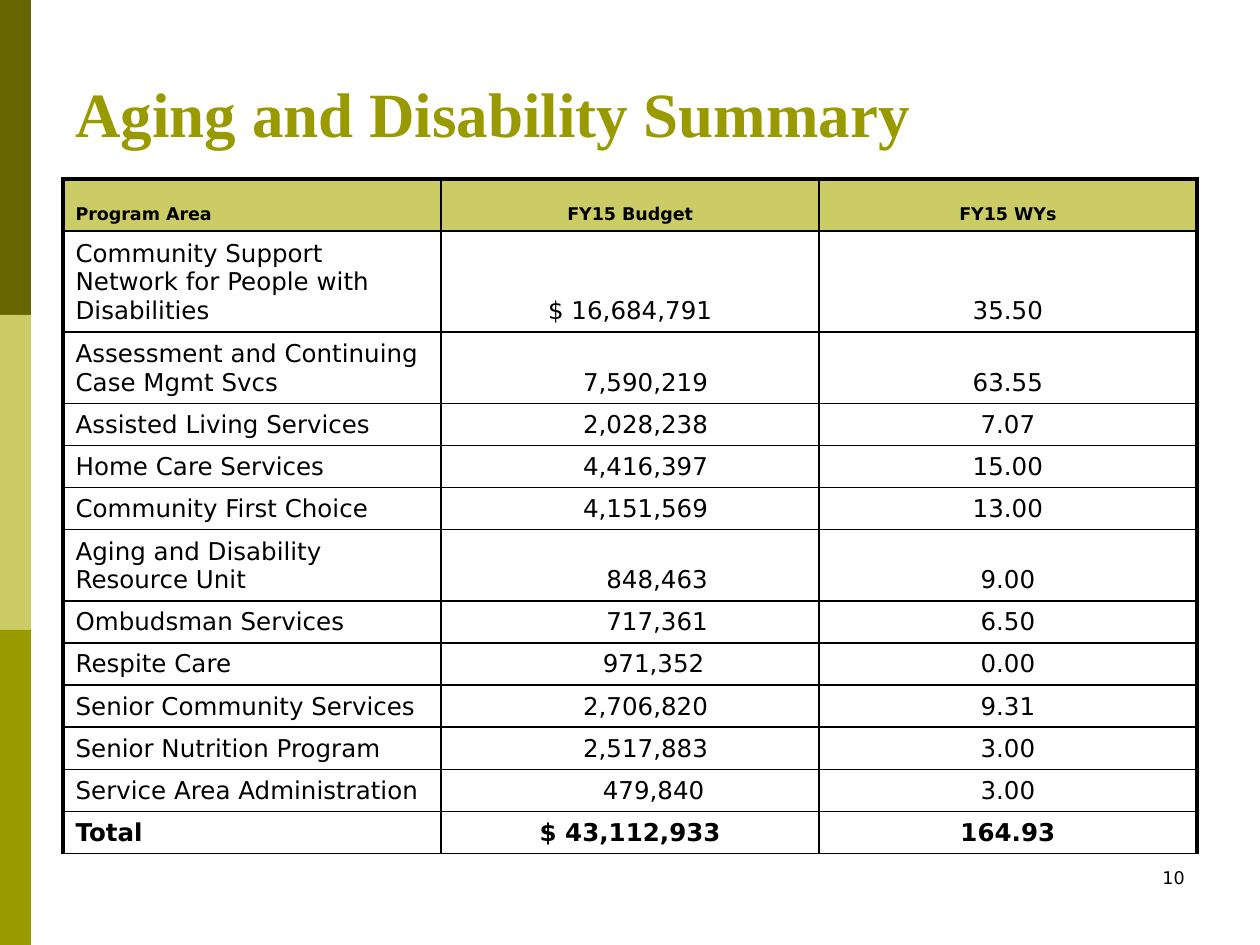
"""Build the Aging and Disability Summary slide with its budget table."""
from lxml import etree
from pptx import Presentation
from pptx import util as u
from pptx.dml.color import RGBColor
from pptx.enum import shapes, text
from pptx.oxml.ns import qn

PX = 914400 // 126
BLACK = RGBColor(0x00, 0x00, 0x00)
DARK = RGBColor(0x66, 0x66, 0x00)
LIGHT = RGBColor(0xCC, 0xCC, 0x66)
OLIVE = RGBColor(0x99, 0x99, 0x00)
LEFT, MID, RIGHT = text.PP_ALIGN.LEFT, text.PP_ALIGN.CENTER, text.PP_ALIGN.RIGHT
SANS, SERIF = "DejaVu Sans", "Times New Roman"


def write(frame, words, align, color, form):
    para = frame.paragraphs[0]
    para.alignment = align
    run = para.add_run()
    run.text = words
    run.font.color.rgb = color
    for key, val in form.items():
        setattr(run.font, key, val)


def edge(cell, side, width):
    line = etree.SubElement(cell._tc.get_or_add_tcPr(), qn("a:" + side), w=str(u.Pt(width)))
    fill = etree.SubElement(line, qn("a:solidFill"))
    etree.SubElement(fill, qn("a:srgbClr"), val=str(BLACK))


deck = Presentation()
deck.slide_width, deck.slide_height = 1260 * PX, 945 * PX
slide = deck.slides.add_slide(deck.slide_layouts[6])

for i, color in enumerate((DARK, LIGHT, OLIVE)):
    bar = slide.shapes.add_shape(shapes.MSO_SHAPE.RECTANGLE, 0, i * 315 * PX, 31 * PX, 315 * PX)
    bar.shadow.inherit = False
    bar.fill.solid()
    bar.fill.fore_color.rgb = color
    bar.line.fill.background()

labels = [
    ("Aging and Disability Summary", (63, 0, 1134, 156), LEFT, OLIVE,
     text.MSO_ANCHOR.BOTTOM, {"name": SERIF, "size": u.Pt(36), "bold": True}),
    ("10", (903, 861, 294, 63), RIGHT, BLACK,
     text.MSO_ANCHOR.TOP, {"name": SANS, "size": u.Pt(10)}),
]
for words, spot, align, color, anchor, form in labels:
    box = slide.shapes.add_textbox(*(n * PX for n in spot))
    box.text_frame.word_wrap = True
    box.text_frame.vertical_anchor = anchor
    write(box.text_frame, words, align, color, form)

rows = [
    ("Program Area", "FY15 Budget", "FY15 WYs", 52, 0),
    ("Community Support Network for People with Disabilities", "$ 16,684,791", "35.50", 99, 0),
    ("Assessment and Continuing Case Mgmt Svcs", "7,590,219", "63.55", 70, 31),
    ("Assisted Living Services", "2,028,238", "7.07", 41, 31),
    ("Home Care Services", "4,416,397", "15.00", 41, 31),
    ("Community First Choice", "4,151,569", "13.00", 41, 31),
    ("Aging and Disability Resource Unit", "848,463", "9.00", 70, 54),
    ("Ombudsman Services", "717,361", "6.50", 41, 54),
    ("Respite Care", "971,352", "0.00", 41, 47),
    ("Senior Community Services", "2,706,820", "9.31", 41, 31),
    ("Senior Nutrition Program", "2,517,883", "3.00", 41, 31),
    ("Service Area Administration", "479,840", "3.00", 41, 47),
    ("Total", "$ 43,112,933", "164.93", 41, 0),
]
last = len(rows) - 1
high = sum(row[3] for row in rows)
grid = slide.shapes.add_table(len(rows), 3, 63 * PX, 179 * PX, 1134 * PX, high * PX).table
for col in grid.columns:
    col.width = 378 * PX

for r, (*words, tall, shift) in enumerate(rows):
    grid.rows[r].height = tall * PX
    form = {"name": SANS, "size": u.Pt(14 if r else 10), "bold": r in (0, last)}
    for c, word in enumerate(words):
        cell = grid.cell(r, c)
        cell.vertical_anchor = text.MSO_ANCHOR.BOTTOM
        if c == 1:
            cell.margin_left = (13 + shift) * PX
        write(cell.text_frame, word, MID if c else LEFT, BLACK, form)
        thick = {"lnL": c == 0, "lnR": c == 2, "lnT": r == 0, "lnB": False}
        for side, wide in thick.items():
            edge(cell, side, 2.25 if wide else 1)
        if r:
            cell.fill.background()
        else:
            cell.fill.solid()
            cell.fill.fore_color.rgb = LIGHT

deck.save("out.pptx")
